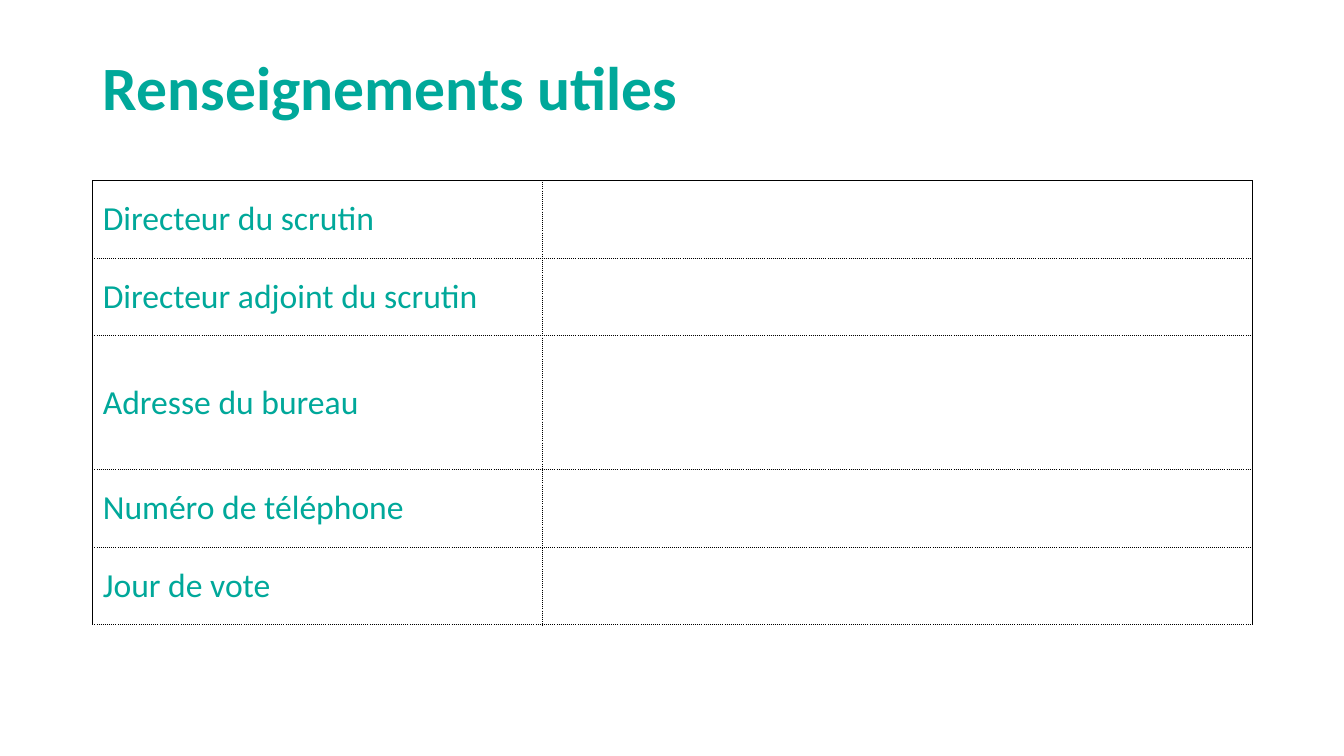
from lxml import etree
from pptx import Presentation
from pptx.dml.color import RGBColor
from pptx.enum.text import MSO_ANCHOR, MSO_AUTO_SIZE, PP_ALIGN
from pptx.oxml.ns import qn
from pptx.util import Inches, Pt

TEAL = RGBColor(0x00, 0xA8, 0x9A)
BLACK = RGBColor(0x00, 0x00, 0x00)
FONT = "Calibri"
LEFT = PP_ALIGN.LEFT
MIDDLE = MSO_ANCHOR.MIDDLE
NO_FIT = MSO_AUTO_SIZE.NONE
TITLE_ONLY = 5

PAGE_WIDTH, PAGE_HEIGHT = Inches(13.33), Inches(7.5)
MARGIN = Inches(0.92)
CONTENT_WIDTH = Inches(11.5)
TITLE_TOP, TITLE_HEIGHT = Inches(0.17), Inches(1.45)
TABLE_TOP = Inches(1.79)
ROW_HEIGHT = Inches(0.77)
ADDRESS_HEIGHT = Inches(1.33)
LABEL_WIDTH = Inches(4.46)

ROWS = [
    ("Directeur du scrutin", ROW_HEIGHT),
    ("Directeur adjoint du scrutin", ROW_HEIGHT),
    ("Adresse du bureau", ADDRESS_HEIGHT),
    ("Numéro de téléphone", ROW_HEIGHT),
    ("Jour de vote", ROW_HEIGHT),
]


def write_text(frame, text, size, bold=False, line_spacing=None):
    para = frame.paragraphs[0]
    para.alignment = LEFT
    para.line_spacing = line_spacing
    span = para.add_run()
    span.text = text
    span.font.name = FONT
    span.font.size = Pt(size)
    span.font.bold = bold
    span.font.color.rgb = TEAL


def add_border(cell, side, dash, width=0.75):
    """Draw one side (L, R, T or B) of a cell with the given dash style."""
    properties = cell._tc.get_or_add_tcPr()
    line = etree.SubElement(properties, qn(f"a:ln{side}"), w=str(Pt(width)))
    fill = etree.SubElement(line, qn("a:solidFill"))
    etree.SubElement(fill, qn("a:srgbClr"), val=str(BLACK))
    etree.SubElement(line, qn("a:prstDash"), val=dash)


def format_cell(cell, solid_sides):
    for side in "LRTB":
        add_border(cell, side, "solid" if side in solid_sides else "sysDot")
    cell.fill.background()
    cell.vertical_anchor = MIDDLE


def add_title(page, text):
    title = page.shapes.title
    title.left, title.top = MARGIN, TITLE_TOP
    title.width, title.height = CONTENT_WIDTH, TITLE_HEIGHT
    frame = title.text_frame
    frame.auto_size = NO_FIT
    frame.vertical_anchor = MIDDLE
    write_text(frame, text, size=44, bold=True, line_spacing=0.9)


def add_form(page, rows):
    """Add a table of labels, each with an empty cell to fill in."""
    height = sum(row_height for _, row_height in rows)
    table = page.shapes.add_table(
        len(rows), 2, MARGIN, TABLE_TOP, CONTENT_WIDTH, height
    ).table
    table.first_row = table.horz_banding = False
    table.columns[0].width = LABEL_WIDTH
    table.columns[1].width = CONTENT_WIDTH - LABEL_WIDTH
    for index, (label, row_height) in enumerate(rows):
        table.rows[index].height = row_height
        top = "T" if index == 0 else ""
        label_cell, answer_cell = table.rows[index].cells
        format_cell(label_cell, "L" + top)
        format_cell(answer_cell, "R" + top)
        write_text(label_cell.text_frame, label, size=24)


def main():
    deck = Presentation()
    deck.slide_width, deck.slide_height = PAGE_WIDTH, PAGE_HEIGHT
    page = deck.slides.add_slide(deck.slide_layouts[TITLE_ONLY])
    add_title(page, "Renseignements utiles")
    add_form(page, ROWS)
    deck.save("out.pptx")


if __name__ == "__main__":
    main()
